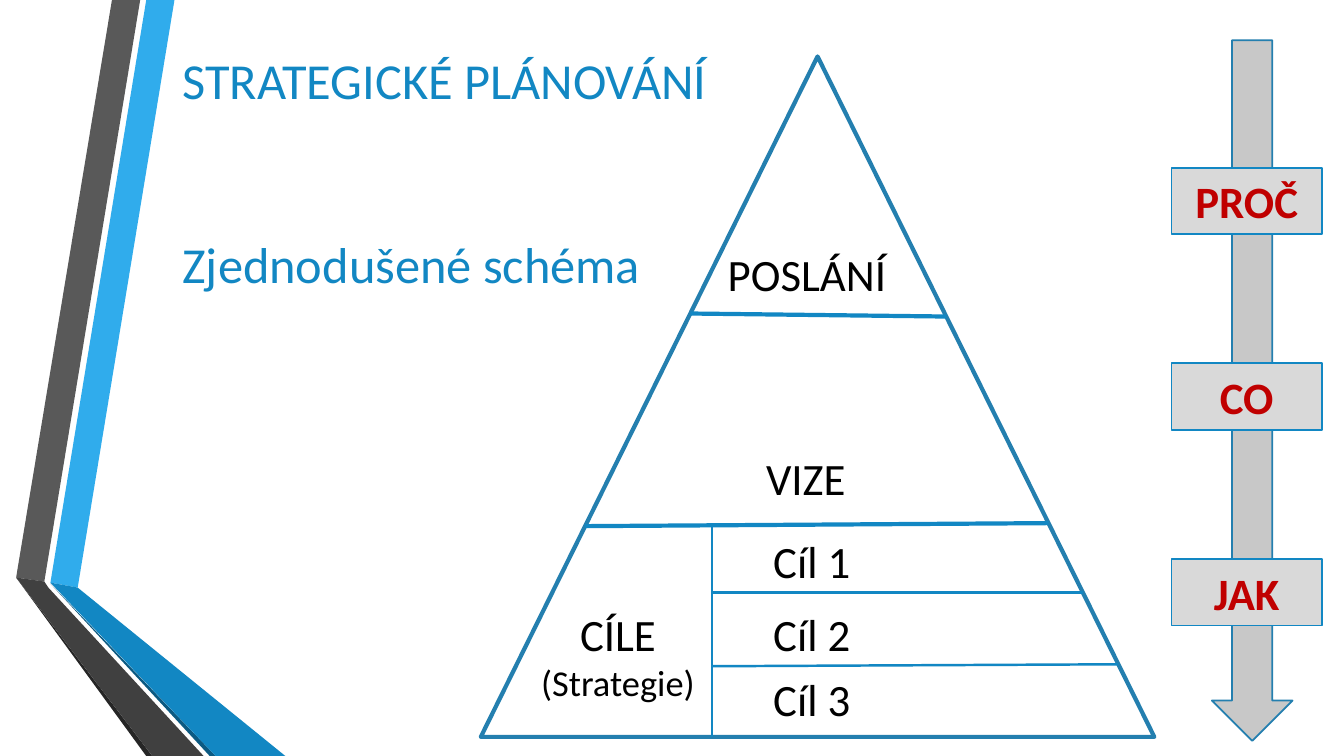
from dataclasses import dataclass

from lxml import etree
from pptx import Presentation
from pptx import util as u
from pptx.dml.color import RGBColor
from pptx.enum import shapes, text
from pptx.oxml.ns import qn

WIDTH, HEIGHT = u.Inches(13.33), u.Inches(7.5)


@dataclass(frozen=True)
class Theme:
    font: str = "Calibri"
    blue: str = "1287C3"
    outline: str = "247FAF"
    ink: str = "000000"
    red: str = "C00000"
    box: str = "D9D9D9"
    arrow: str = "C8C8C8"
    title_size: float = 36
    label_size: float = 32
    note_size: float = 26
    thick: float = 3
    medium: float = 1.75
    thin: float = 1.25


THEME = Theme()

# Ribbon bands: colour and corners, in percent of the slide
RIBBON = [
    ("30ACEC", [(3.75, 77.07), (5.78, 77.73), (12.98, 0), (10.88, 0)]),
    ("595959", [(10.43, 0), (8.33, 0), (1.2, 76.4), (3.3, 76.93)]),
    ("262626", [(1.2, 76.4), (10.88, 100), (11.33, 100)]),
    ("0C5A82", [(3.75, 77.2), (15.6, 100), (16.05, 100)]),
    (THEME.blue, [(3.75, 77.07), (16.05, 100), (21.23, 100), (5.78, 77.73)]),
    ("404040", [(15.15, 100), (3.6, 77.73), (3.3, 76.93), (1.2, 76.4), (11.33, 100)]),
]

# Pyramid geometry, in percent of the slide
LEFT, TOP, BASE, RISE = 35.78, 7.47, 50.11, 90
BOTTOM = TOP + RISE
DIVIDER = 52.96


def across(share):
    return round(WIDTH * share / 100)


def down(share):
    return round(HEIGHT * share / 100)


def frame(left, top, width, height):
    return across(left), down(top), across(width), down(height)


def edge(level, side):
    """Horizontal place of the pyramid's side (-1 left, 1 right) at a level."""
    return LEFT + BASE / 2 * (1 + side * (level - TOP) / RISE)


def paint(shape, fill=None, line=None, weight=0):
    shape.shadow.inherit = False
    if fill:
        shape.fill.solid()
        shape.fill.fore_color.rgb = RGBColor.from_string(fill)
    else:
        shape.fill.background()
    if line:
        shape.line.color.rgb = RGBColor.from_string(line)
        shape.line.width = u.Pt(weight)
    else:
        shape.line.fill.background()


def write(shape, lines, color, sizes, align=text.PP_ALIGN.LEFT, bold=False):
    text_frame = shape.text_frame
    text_frame.word_wrap = True
    text_frame.text = "\n".join(lines)
    for paragraph, size in zip(text_frame.paragraphs, sizes):
        paragraph.alignment = align
        font = paragraph.runs[0].font
        font.name, font.size, font.bold = THEME.font, u.Pt(size), bold
        font.color.rgb = RGBColor.from_string(color)


def add_band(slide, color, corners):
    points = [(across(x), down(y)) for x, y in corners]
    builder = slide.shapes.build_freeform(*points[0])
    builder.add_line_segments(points[1:], close=True)
    paint(builder.convert_to_shape(), color)


def add_label(slide, place, lines, sizes=(THEME.label_size,), color=THEME.ink,
              align=text.PP_ALIGN.LEFT):
    label = slide.shapes.add_textbox(*frame(*place))
    write(label, lines, color, sizes, align)
    return label


def add_line(slide, start, end, weight):
    line = slide.shapes.add_connector(
        shapes.MSO_CONNECTOR.STRAIGHT,
        across(start[0]), down(start[1]), across(end[0]), down(end[1]))
    line.line.color.rgb = RGBColor.from_string(THEME.blue)
    line.line.width = u.Pt(weight)
    etree.SubElement(line._element.spPr, qn("a:effectLst"))


def add_shape(slide, kind, place, fill=None, line=THEME.outline, weight=THEME.thin):
    shape = slide.shapes.add_shape(kind, *frame(*place))
    paint(shape, fill, line, weight)
    return shape


def add_pyramid(slide):
    add_shape(slide, shapes.MSO_SHAPE.ISOSCELES_TRIANGLE, (LEFT, TOP, BASE, RISE),
              weight=THEME.thick)
    # Level borders, from side to side
    for left_level, right_level in [(41.47, 41.87), (69.6, 69.2)]:
        add_line(slide, (edge(left_level, -1), left_level),
                 (edge(right_level, 1), right_level), THEME.thick)
    # Goals: divider and row borders
    add_line(slide, (DIVIDER, BOTTOM), (DIVIDER, 69.47), THEME.medium)
    for start, end in [(78.4, 78.4), (88.13, 87.87)]:
        add_line(slide, (DIVIDER, start), (edge(end, 1), end), THEME.medium)
    # Labels
    add_label(slide, (53.41, 32, 14.85, 8.53), ["POSLÁNÍ"])
    add_label(slide, (56.26, 58.93, 9.23, 8.53), ["VIZE"])
    add_label(slide, (39.01, 79.6, 13.95, 14.4), ["CÍLE", "(Strategie)"],
              (THEME.label_size, THEME.note_size), align=text.PP_ALIGN.CENTER)
    for number, top in enumerate((70, 79.6, 88.13), start=1):
        add_label(slide, (56.79, top, 7.95, 8.53), [f"Cíl {number}"])


def add_questions(slide):
    add_shape(slide, shapes.MSO_SHAPE.DOWN_ARROW, (90.17, 5.33, 6, 92.67), THEME.arrow)
    for row, question in enumerate(["PROČ", "CO", "JAK"]):
        box = add_shape(slide, shapes.MSO_SHAPE.RECTANGLE,
                        (87.17, 22.2 + 25.87 * row, 11.18, 8.8), THEME.box, THEME.blue)
        box.text_frame.vertical_anchor = text.MSO_ANCHOR.MIDDLE
        write(box, [question], THEME.red, [THEME.label_size],
              text.PP_ALIGN.CENTER, bold=True)


def main():
    presentation = Presentation()
    presentation.slide_width, presentation.slide_height = WIDTH, HEIGHT
    slide = presentation.slides.add_slide(presentation.slide_layouts[6])

    # Ribbon at the left
    for color, corners in RIBBON:
        add_band(slide, color, corners)

    # Title and subtitle
    title = add_label(slide, (12.83, 5.87, 46.51, 33.6),
                      ["STRATEGICKÉ PLÁNOVÁNÍ", "Zjednodušené schéma"],
                      [THEME.title_size] * 2, THEME.blue)
    title.text_frame.paragraphs[1].space_before = u.Pt(88)

    add_pyramid(slide)
    add_questions(slide)
    presentation.save("out.pptx")


if __name__ == "__main__":
    main()
